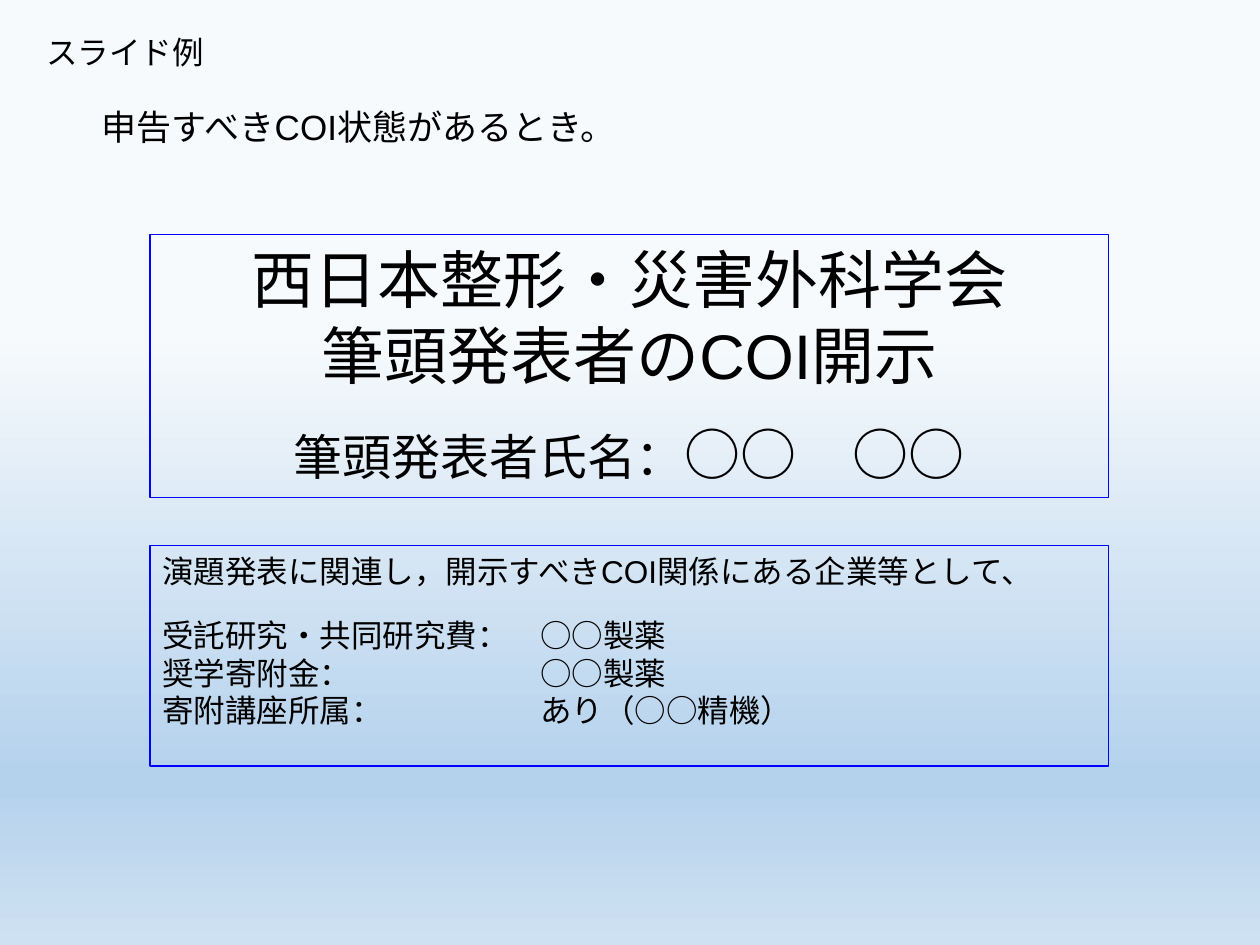
"""Build the conflict of interest disclosure slide."""
from lxml.etree import SubElement
from pptx import Presentation
from pptx.dml.color import RGBColor
from pptx.enum.shapes import MSO_SHAPE
from pptx.enum.text import MSO_ANCHOR, PP_ALIGN
from pptx.oxml.ns import qn
from pptx.util import Inches, Pt

HUES = {"text": "000000", "line": "0000FF", "pale": "F7FAFD", "blue": "B5D2EC", "base": "CEE1F2"}
STOPS = [(35, "pale"), (82, "blue"), (83, "blue"), (100, "base")]


def write(frame, lines, align=PP_ALIGN.LEFT, tab=None):
    for i, (gap, runs) in enumerate(lines):
        para = frame.paragraphs[0] if i == 0 else frame.add_paragraph()
        para.alignment = align
        if gap:
            para.space_before = Pt(gap)
        if tab:
            tabs = SubElement(para._p.get_or_add_pPr(), qn("a:tabLst"))
            SubElement(tabs, qn("a:tab"), pos=str(Inches(tab)), algn="l")
        for text, size in runs:
            run = para.add_run()
            run.text = text
            run.font.size = Pt(size)
            run.font.name = "Arial"
            run.font.color.rgb = RGBColor.from_string(HUES["text"])


def frame_box(top, height):
    box = slide.shapes.add_shape(
        MSO_SHAPE.RECTANGLE, Inches(1.19), Inches(top), Inches(7.61), Inches(height))
    box.shadow.inherit = False
    box.fill.background()
    box.line.color.rgb = RGBColor.from_string(HUES["line"])
    box.line.width = Pt(0.75)
    box.text_frame.word_wrap = True
    box.text_frame.vertical_anchor = MSO_ANCHOR.TOP
    return box.text_frame


deck = Presentation()
deck.slide_width = Inches(10)
deck.slide_height = Inches(7.5)
slide = deck.slides.add_slide(deck.slide_layouts[6])

fill = slide.background.fill
fill.gradient()
fill.gradient_angle = 270
grad = slide._element.cSld.find(".//" + qn("a:gsLst"))
for stop in list(grad):
    grad.remove(stop)
for place, hue in STOPS:
    stop = SubElement(grad, qn("a:gs"), pos=str(place * 1000))
    SubElement(stop, qn("a:srgbClr"), val=HUES[hue])

title = frame_box(1.86, 2.09)
write(title, [
    (0, [("西日本整形・災害外科学会", 36)]),
    (0, [("筆頭発表者のCOI開示", 36)]),
    (16, [("筆頭発表者氏名：", 28), ("○○　○○", 32)]),
], PP_ALIGN.CENTER)

label = slide.shapes.add_textbox(Inches(0.27), Inches(0.21), Inches(1.47), Inches(0.4))
label.text_frame.word_wrap = False
write(label.text_frame, [(0, [("スライド例", 18)])])

detail = frame_box(4.33, 1.75)
write(detail, [
    (0, [("演題発表に関連し，開示すべきCOI関係にある企業等として、", 18)]),
    (15, [("受託研究・共同研究費：\t○○製薬", 18)]),
    (0, [("奨学寄附金：\t○○製薬", 18)]),
    (0, [("寄附講座所属：\tあり（○○精機）", 18)]),
], tab=3)

note = slide.shapes.add_textbox(Inches(0.71), Inches(0.79), Inches(8.15), Inches(0.74))
note.text_frame.word_wrap = True
write(note.text_frame, [(0, [("申告すべきCOI状態があるとき。", 20)])])

deck.save("out.pptx")
